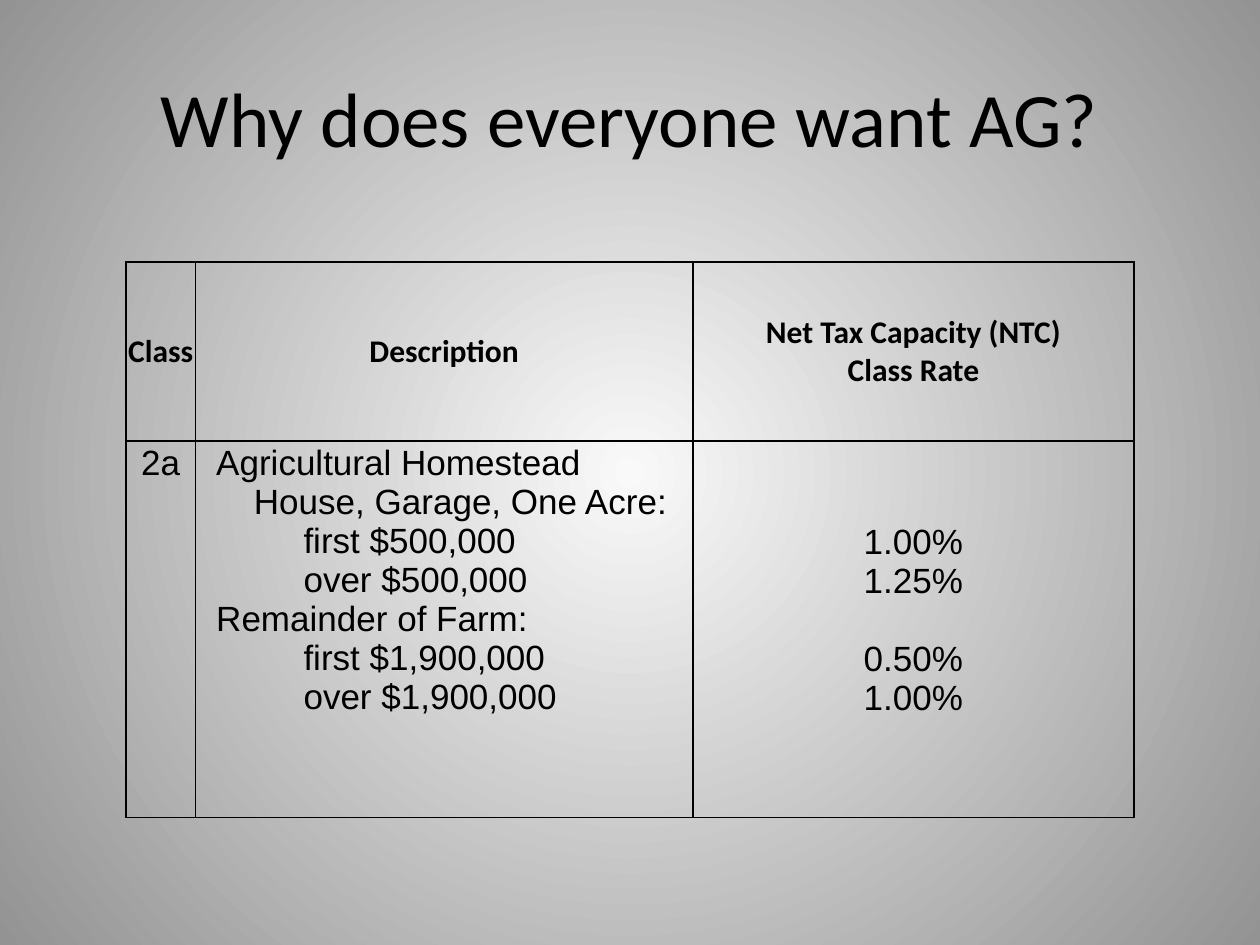
from dataclasses import dataclass

from lxml.etree import SubElement
from pptx import Presentation
from pptx.dml.color import RGBColor
from pptx.enum.text import MSO_ANCHOR, PP_ALIGN
from pptx.oxml import parse_xml
from pptx.oxml.ns import nsdecls, qn
from pptx.util import Cm, Pt


@dataclass(frozen=True)
class Theme:
    ink: str = "000000"
    center: str = "F9F9F9"
    edge: str = "939393"
    heading_font: str = "Calibri"
    body_font: str = "Arial"
    title_size: int = 44
    header_size: int = 18
    body_size: int = 20
    border: int = 1


THEME = Theme()
HEADERS = [["Class"], ["Description"], ["Net Tax Capacity (NTC)", "Class Rate"]]
COLUMN_WIDTHS = [1.4, 10.03, 8.89]
ROW_HEIGHTS = [3.61, 7.59]
INDENTS = [0.37, 1.13, 2.13]
DESCRIPTIONS = [
    ("Agricultural Homestead", 0),
    ("House, Garage, One Acre:", 1),
    ("first $500,000", 2),
    ("over $500,000", 2),
    ("Remainder of Farm:", 0),
    ("first $1,900,000", 2),
    ("over $1,900,000", 2),
]
RATES = ["1.00%", "1.25%", "0.50%", "1.00%"]
RATE_TOP = 1.64
RATE_GROUP_GAP = 22.3


def write_text(frame, lines, *, font, size, bold=False, align=PP_ALIGN.CENTER):
    """Write one paragraph per line and return the paragraphs."""
    frame.clear()
    for index, line in enumerate(lines):
        para = frame.paragraphs[0] if index == 0 else frame.add_paragraph()
        para.alignment = align
        span = para.add_run()
        span.text = line
        span.font.name = font
        span.font.size = Pt(size)
        span.font.bold = bold
        span.font.color.rgb = RGBColor.from_string(THEME.ink)
    return frame.paragraphs


def paint_background(slide):
    """Fill the slide with a circular gradient, light in the middle."""
    fill = slide.background.fill
    fill.gradient()
    for stop, color in zip(fill.gradient_stops, (THEME.center, THEME.edge)):
        stop.color.rgb = RGBColor.from_string(color)
    gradient = slide.element.find(".//" + qn("a:gradFill"))
    gradient.remove(gradient.find(qn("a:lin")))
    circle = SubElement(gradient, qn("a:path"), {"path": "circle"})
    SubElement(circle, qn("a:fillToRect"), dict.fromkeys("ltrb", "50000"))


def add_title(slide, text):
    title = slide.shapes.title
    title.left, title.top, title.width, title.height = Cm(1.27), Cm(0.76), Cm(22.86), Cm(3.18)
    title.text_frame.vertical_anchor = MSO_ANCHOR.MIDDLE
    write_text(title.text_frame, [text], font=THEME.heading_font, size=THEME.title_size)


def format_cell(cell, *, margin, anchor):
    cell.margin_left = cell.margin_top = cell.margin_right = cell.margin_bottom = Cm(margin)
    cell.vertical_anchor = anchor
    cell.fill.background()
    properties = cell._tc.get_or_add_tcPr()
    for index, side in enumerate("LRTB"):
        properties.insert(index, parse_xml(
            f'<a:ln{side} {nsdecls("a")} w="{Pt(THEME.border)}"><a:solidFill>'
            f'<a:srgbClr val="{THEME.ink}"/></a:solidFill></a:ln{side}>'))


def add_grid(slide):
    frame = slide.shapes.add_table(
        len(ROW_HEIGHTS), len(COLUMN_WIDTHS), Cm(2.54), Cm(5.28),
        Cm(sum(COLUMN_WIDTHS)), Cm(sum(ROW_HEIGHTS)))
    table = frame.table
    table.first_row = table.horz_banding = False
    for column, width in zip(table.columns, COLUMN_WIDTHS):
        column.width = Cm(width)
    for row, height in zip(table.rows, ROW_HEIGHTS):
        row.height = Cm(height)
    return table


def fill_header(table):
    for column, lines in enumerate(HEADERS):
        cell = table.cell(0, column)
        format_cell(cell, margin=0, anchor=MSO_ANCHOR.MIDDLE)
        write_text(cell.text_frame, lines, font=THEME.heading_font,
                   size=THEME.header_size, bold=True)


def fill_body(table):
    class_cell, description_cell, rate_cell = (table.cell(1, column) for column in range(3))
    for cell in (class_cell, description_cell, rate_cell):
        format_cell(cell, margin=0.05, anchor=MSO_ANCHOR.TOP)
    body = {"font": THEME.body_font, "size": THEME.body_size}

    write_text(class_cell.text_frame, ["2a"], **body)

    paras = write_text(description_cell.text_frame, [text for text, _ in DESCRIPTIONS],
                       align=PP_ALIGN.LEFT, **body)
    for para, (_, level) in zip(paras, DESCRIPTIONS):
        para._p.get_or_add_pPr().set("marL", str(Cm(INDENTS[level])))

    rate_cell.margin_top = Cm(RATE_TOP)
    paras = write_text(rate_cell.text_frame, RATES, **body)
    paras[2].space_before = Pt(RATE_GROUP_GAP)


def main():
    deck = Presentation()
    deck.slide_width, deck.slide_height = Cm(25.4), Cm(19.05)
    slide = deck.slides.add_slide(deck.slide_layouts.get_by_name("Title Only"))
    paint_background(slide)
    add_title(slide, "Why does everyone want AG?")
    table = add_grid(slide)
    fill_header(table)
    fill_body(table)
    deck.save("out.pptx")


if __name__ == "__main__":
    main()
